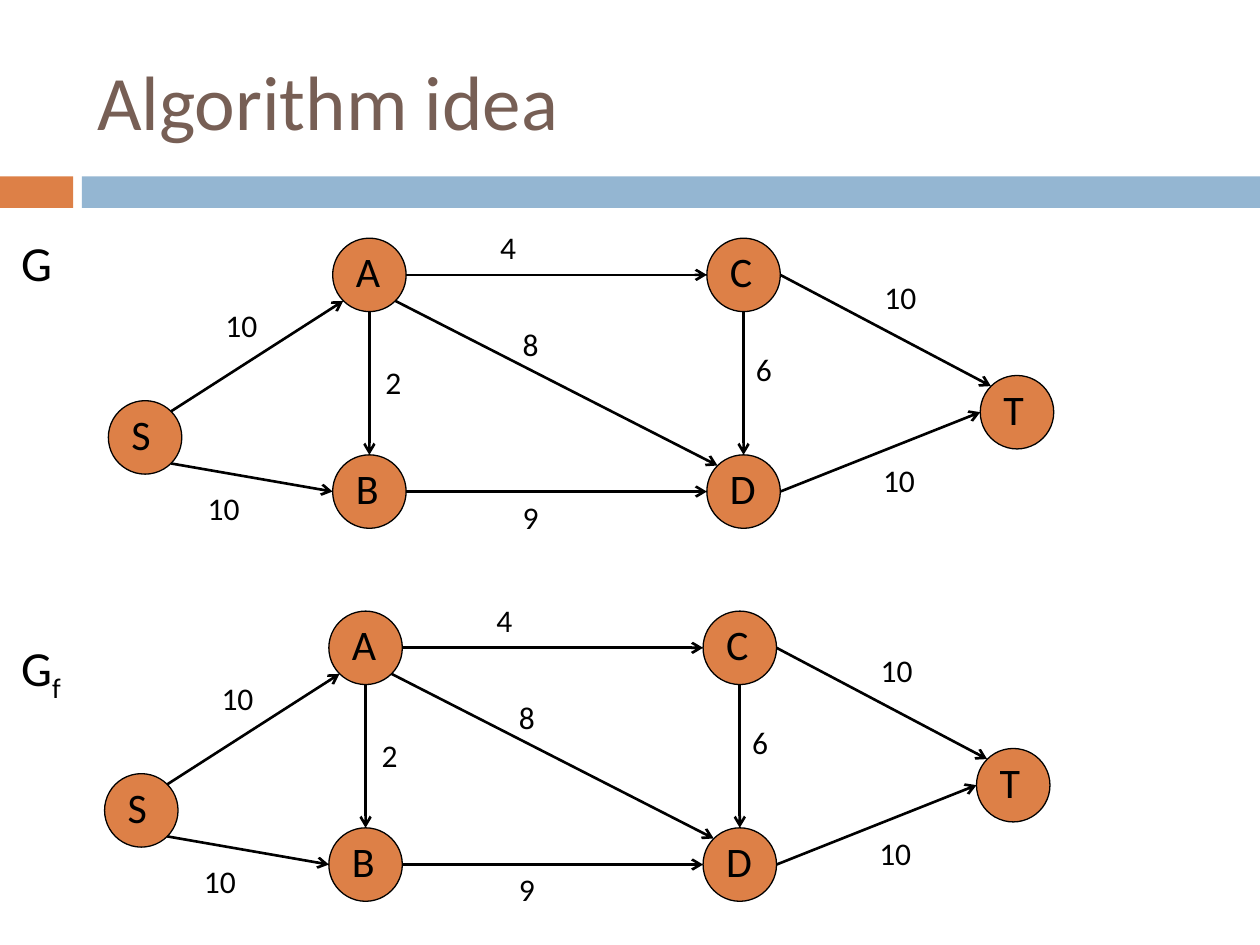
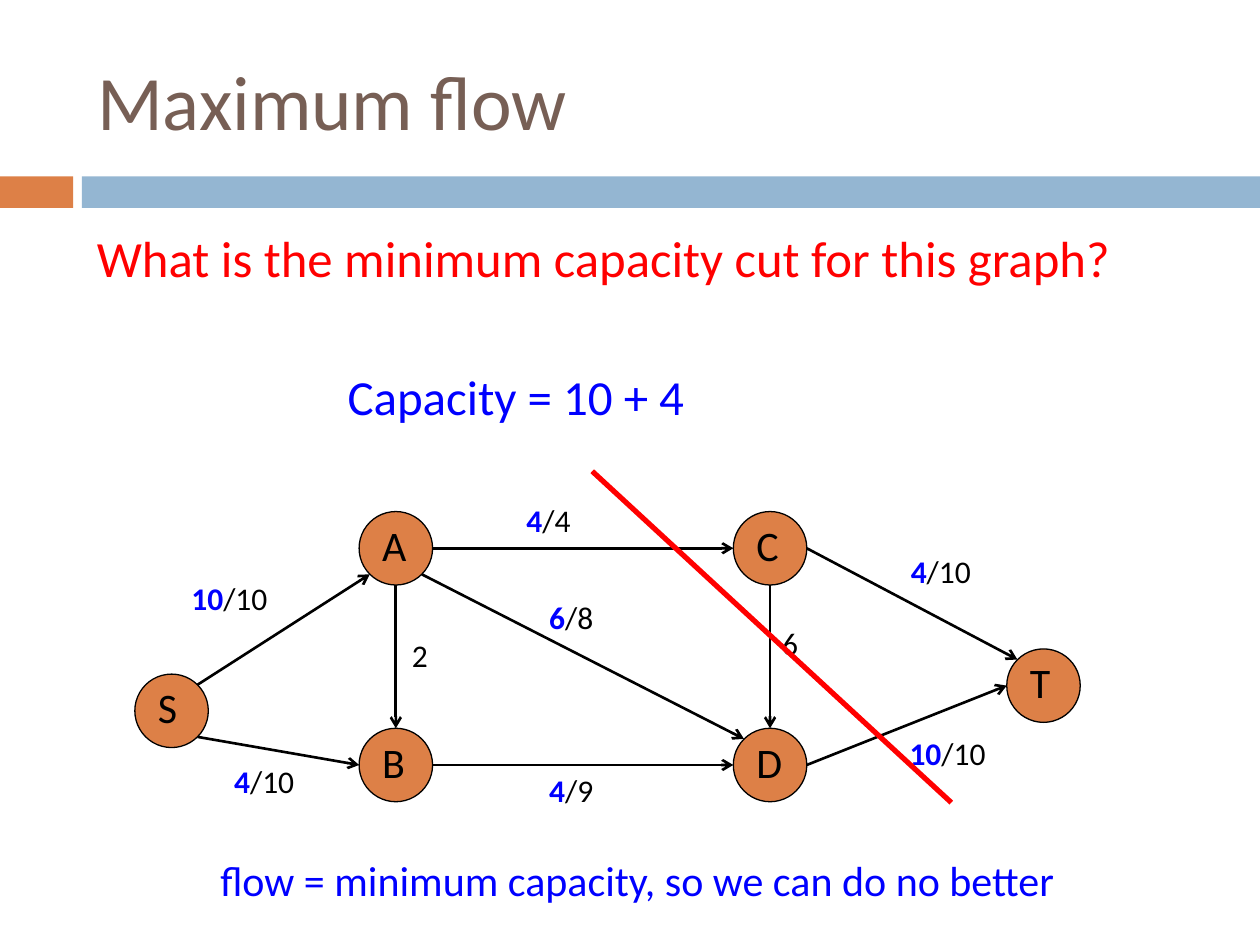
from lxml import etree
from pptx import Presentation, util as u
from pptx.dml import color as dml
from pptx.enum import shapes, text
from pptx.oxml import ns

FONT = "Calibri"
COLORS = {
    "node": "DD8047",
    "band": "94B6D2",
    "title": "775F55",
    "ink": "000000",
    "flow": "0000FF",
    "alert": "FF0000",
}

COLUMNS, ROWS = 100, 75
CELL = u.Inches(10) // COLUMNS
DIAMETER = 5.83

NODES = {
    "S": (0, 12.9),
    "A": (17.8, 0),
    "B": (17.8, 17.2),
    "C": (47.5, 0),
    "D": (47.5, 17.2),
    "T": (69.2, 10.9),
}
SITES = {
    "top": (0, -1),
    "bottom": (0, 1),
    "left": (-1, 0),
    "right": (1, 0),
    "top left": (-0.71, -0.71),
    "top right": (0.71, -0.71),
    "bottom left": (-0.71, 0.71),
    "bottom right": (0.71, 0.71),
}
EDGES = {
    "SA": ("top right", "bottom left", (8.3, 4.9)),
    "SB": ("bottom right", "left", (6.9, 19.4)),
    "AB": ("bottom", "top", (21, 9.4)),
    "AC": ("right", "left", (30.1, -1.3)),
    "AD": ("bottom right", "top left", (31.9, 6.4)),
    "BD": ("right", "left", (31.9, 20.1)),
    "CD": ("bottom", "top", (50.4, 8.4)),
    "CT": ("right", "top left", (60.6, 2.7)),
    "DT": ("right", "left", (60.5, 17.2)),
}
CAPACITIES = {
    "SA": "10", "SB": "10", "AB": "2", "AC": "4", "AD": "8",
    "BD": "9", "CD": "6", "CT": "10", "DT": "10",
}
FLOWS = {"SA": "10", "SB": "4", "AC": "4", "AD": "6", "BD": "4", "CT": "4", "DT": "10"}


def grid(*cells):
    return [round(cell * CELL) for cell in cells]


def rgb(name):
    return dml.RGBColor.from_string(COLORS[name])


def write_run(paragraph, words, size=18, color="ink", bold=False, subscript=False):
    run = paragraph.add_run()
    run.text = words
    run.font.name = FONT
    run.font.size = u.Pt(size)
    run.font.bold = bold
    run.font.color.rgb = rgb(color)
    if subscript:
        run.font.subscript = True if hasattr(run.font, "subscript") else None
        run._r.get_or_add_rPr().set("baseline", "-25000")


def add_text(slide, left, top, width, height, words, **style):
    box = slide.shapes.add_textbox(*grid(left, top, width, height))
    box.text_frame.word_wrap = True
    paragraph = box.text_frame.paragraphs[0]
    write_run(paragraph, words, **style)
    return paragraph


def add_filled(slide, preset, left, top, width, height, fill):
    shape = slide.shapes.add_shape(preset, *grid(left, top, width, height))
    shape.shadow.inherit = False
    shape.fill.solid()
    shape.fill.fore_color.rgb = rgb(fill)
    shape.line.fill.background()
    return shape


def add_line(slide, start, end, color="ink", width=1.5, arrow=True):
    connector = slide.shapes.add_connector(
        shapes.MSO_CONNECTOR.STRAIGHT, *grid(*start, *end))
    connector.line.color.rgb = rgb(color)
    connector.line.width = u.Pt(width)
    if arrow:
        outline = connector.line._get_or_add_ln()
        etree.SubElement(outline, ns.qn("a:tailEnd"), type="arrow")
    etree.SubElement(connector.element.spPr, ns.qn("a:effectLst"))


def add_node(slide, name, left, top):
    node = add_filled(slide, shapes.MSO_SHAPE.OVAL, left, top, DIAMETER, DIAMETER, "node")
    node.line.color.rgb = rgb("ink")
    node.line.width = u.Pt(0.75)
    frame = node.text_frame
    frame.word_wrap = False
    frame.vertical_anchor = text.MSO_ANCHOR.MIDDLE
    frame.margin_left, frame.margin_right = grid(1, 0)
    frame.margin_top, frame.margin_bottom = grid(0, 0.6)
    paragraph = frame.paragraphs[0]
    paragraph.alignment = text.PP_ALIGN.LEFT
    write_run(paragraph, name, size=24)


def site_point(name, site, left, top):
    radius = DIAMETER / 2
    return [origin + offset + radius * (1 + direction)
            for origin, offset, direction in zip((left, top), NODES[name], SITES[site])]


def add_edge_label(slide, left, top, capacity, flow):
    if flow is None:
        add_text(slide, left, top, 9.5, 4, capacity)
    else:
        paragraph = add_text(slide, left, top, 9.5, 4, flow, color="flow", bold=True)
        write_run(paragraph, "/" + capacity)


def add_graph(slide, left, top, flows=None, label_shifts=None):
    flows, label_shifts = flows or {}, label_shifts or {}
    for name, (column, row) in NODES.items():
        add_node(slide, name, left + column, top + row)
    for edge, (start_site, end_site, (column, row)) in EDGES.items():
        start, end = edge
        add_line(slide, site_point(start, start_site, left, top),
                 site_point(end, end_site, left, top))
        add_edge_label(slide, left + column + label_shifts.get(edge, 0), top + row,
                       CAPACITIES[edge], flows.get(edge))


def add_titled_slide(presentation, title):
    slide = presentation.slides.add_slide(presentation.slide_layouts.get_by_name("Title Only"))
    shape = slide.shapes.title
    shape.left, shape.top, shape.width, shape.height = grid(6.7, 2.5, 89.2, 10.8)
    shape.text_frame.vertical_anchor = text.MSO_ANCHOR.MIDDLE
    paragraph = shape.text_frame.paragraphs[0]
    paragraph.alignment = text.PP_ALIGN.LEFT
    write_run(paragraph, title, size=44, color="title")
    return slide


def add_master_bands(presentation, slide):
    bands = ((0, 5.8, "node"), (6.5, COLUMNS - 6.5, "band"))
    for number, (left, width, fill) in enumerate(bands, start=101):
        band = add_filled(slide, shapes.MSO_SHAPE.RECTANGLE, left, 14, width, 2.5, fill)
        band.element.nvSpPr.cNvPr.set("id", str(number))
        presentation.slide_master.shapes.element.append(band.element)


def build_algorithm_idea(presentation):
    slide = add_titled_slide(presentation, "Algorithm idea")
    add_master_bands(presentation, slide)
    add_graph(slide, 8.6, 18.9)
    add_graph(slide, 8.3, 48.5)
    add_text(slide, 0.7, 18, 8.8, 5.7, "G", size=28)
    residual = add_text(slide, 0.7, 50.1, 8.8, 5.7, "G", size=28)
    write_run(residual, "f", size=28, subscript=True)


def build_maximum_flow(presentation):
    slide = add_titled_slide(presentation, "Maximum flow")
    add_graph(slide, 10.7, 40.6, flows=FLOWS, label_shifts={"SA": -4.8})
    add_text(slide, 6.7, 17.5, 89.2, 7, "What is the minimum capacity cut for this graph?",
             size=29, color="alert")
    add_line(slide, (75.5, 63.7), (47, 37.4), color="alert", width=3, arrow=False)
    add_text(slide, 26.6, 28.6, 47.1, 5.7, "Capacity = 10 + 4", size=28, color="flow")
    add_text(slide, 16.5, 67.3, 75.6, 5, "flow = minimum capacity, so we can do no better",
             size=24, color="flow")


def main():
    presentation = Presentation()
    presentation.slide_width, presentation.slide_height = grid(COLUMNS, ROWS)
    build_algorithm_idea(presentation)
    build_maximum_flow(presentation)
    presentation.save("out.pptx")


if __name__ == "__main__":
    main()
